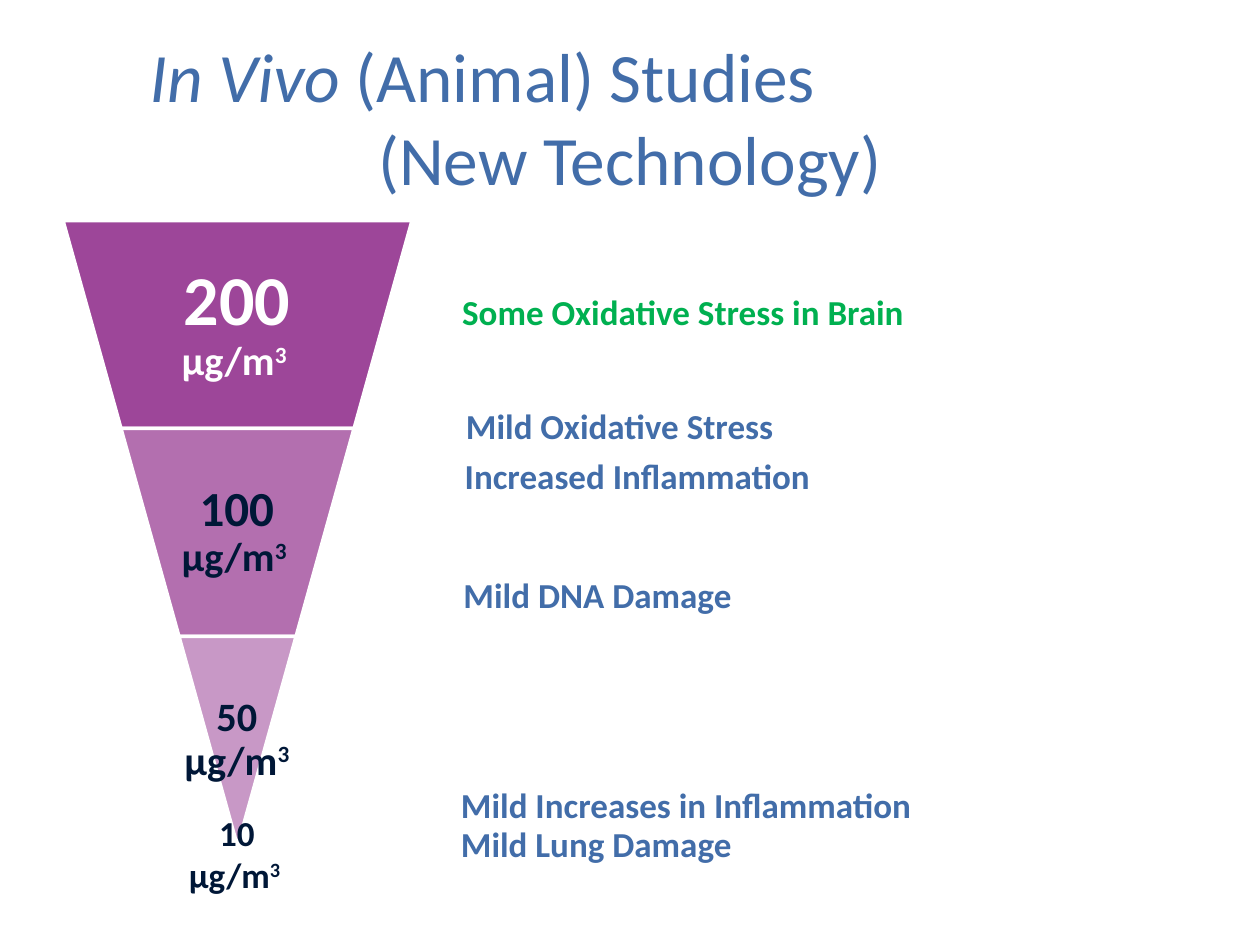
from dataclasses import dataclass

from lxml import etree
from pptx import Presentation
from pptx.dml.color import RGBColor
from pptx.enum.shapes import MSO_SHAPE
from pptx.enum.text import MSO_ANCHOR, PP_ALIGN
from pptx.oxml.ns import qn
from pptx.util import Pt

PX = 9144
TRAP = MSO_SHAPE.TRAPEZOID
TOP, MID = MSO_ANCHOR.TOP, MSO_ANCHOR.MIDDLE
LEFT, MIDDLE = PP_ALIGN.LEFT, PP_ALIGN.CENTER


@dataclass(frozen=True)
class Theme:
    """Colours, font and type sizes of the slide."""
    font: str = "Calibri"
    blue: str = "426DA9"
    green: str = "00B050"
    purple: str = "93328E"
    navy: str = "001737"
    white: str = "FFFFFF"
    title: float = 39.6
    large: int = 40
    mid: int = 28
    unit: int = 23
    body: int = 20


THEME = Theme()


def add_box(slide, box, pad=(10, 5), anchor=TOP, wrap=True):
    """Add an empty text box and return its frame."""
    frame = slide.shapes.add_textbox(*(n * PX for n in box)).text_frame
    frame.word_wrap = wrap
    frame.vertical_anchor = anchor
    frame.margin_left = frame.margin_right = pad[0] * PX
    frame.margin_top = frame.margin_bottom = pad[1] * PX
    return frame


def add_run(para, text, size, color, bold=True):
    """Append one styled run to a paragraph."""
    run = para.add_run()
    run.text = text
    font = run.font
    font.name, font.size, font.bold = THEME.font, Pt(size), bold
    font.color.rgb = RGBColor.from_string(color)
    return run


def add_dose(frame, dose, size, unit, color):
    """Write a dose with its unit and a raised three."""
    para = frame.paragraphs[0]
    para.alignment = MIDDLE
    add_run(para, dose, size, color)
    add_run(para, " µg/m", unit, color)
    cube = add_run(para, "3 ", unit, color)
    cube.font._element.set("baseline", "30000")
    return para


def add_title(slide, box):
    """Write the two staggered title lines."""
    frame = add_box(slide, box, anchor=MID)
    first, second = frame.paragraphs[0], frame.add_paragraph()
    first.alignment, second.alignment = LEFT, MIDDLE
    props = first._p.get_or_add_pPr()
    props.set("marL", str(59 * PX))
    props.set("indent", "0")
    add_run(first, "In Vivo ", THEME.title, THEME.blue, False).font.italic = True
    add_run(first, "(Animal) Studies", THEME.title, THEME.blue, False)
    add_run(second, "(New Technology)", THEME.title, THEME.blue, False)


def add_tier(slide, box, slant, alpha):
    """Draw one downward trapezoid of the funnel."""
    tier = slide.shapes.add_shape(TRAP, *(n * PX for n in box))
    tier.rotation = 180
    tier.shadow.inherit = False
    tier.adjustments[0] = slant / min(box[2:])
    tier.fill.solid()
    tier.fill.fore_color.rgb = RGBColor.from_string(THEME.purple)
    tint = tier._element.spPr.find(qn("a:solidFill"))[0]
    etree.SubElement(tint, qn("a:alpha")).set("val", str(alpha * 1000))
    tier.line.color.rgb = RGBColor.from_string(THEME.white)
    tier.line.width = Pt(2)


def add_funnel(slide, box):
    """Stack the dose tiers and put the lowest dose under the tip."""
    left, top, width, height = box
    tiers = [
        ("200", THEME.large, THEME.white, 90, 180, 6),
        ("100", THEME.mid, THEME.navy, 70, 120, 4),
        ("50", THEME.unit, THEME.navy, 50, 92, 3),
    ]
    step = height // len(tiers)
    slant = width // (2 * len(tiers))
    for i, (dose, size, color, alpha, span, pad) in enumerate(tiers):
        y = top + i * step
        add_tier(slide, (left + i * slant, y, width - 2 * i * slant, step),
                 slant, alpha)
        spot = (left + (width - span) // 2, y, span, step)
        frame = add_box(slide, spot, (pad, pad), MID)
        add_dose(frame, dose, size, THEME.unit, color).line_spacing = 0.9
    tip = add_box(slide, (left + width // 2 - 51, top + 464, 102, 111))
    add_dose(tip, "10", THEME.body, THEME.body, THEME.navy)


def add_notes(slide, box):
    """List the effects beside the funnel."""
    left, top, width, height = box
    notes = [
        (1, 0, 374, "Some Oxidative Stress in Brain", THEME.green),
        (4, 90, 266, "Mild Oxidative Stress", THEME.blue),
        (3, 130, 297, "Increased Inflammation", THEME.blue),
        (2, 224, 235, "Mild DNA Damage", THEME.blue),
        (0, 391, 381, "Mild Increases in Inflammation", THEME.blue),
        (0, 422, 237, "Mild Lung Damage", THEME.blue),
    ]
    for x, y, span, text, color in notes:
        frame = add_box(slide, (left + x, top + y, span, 44), wrap=False)
        add_run(frame.paragraphs[0], text, THEME.body, color)


def main():
    """Build and save the slide."""
    deck = Presentation()
    deck.slide_width, deck.slide_height = 1000 * PX, 750 * PX
    slide = deck.slides.add_slide(deck.slide_layouts[6])
    add_title(slide, (50, 30, 900, 125))
    add_funnel(slide, (50, 175, 277, 495))
    add_notes(slide, (356, 226, 381, 466))
    deck.save("out.pptx")


if __name__ == "__main__":
    main()
